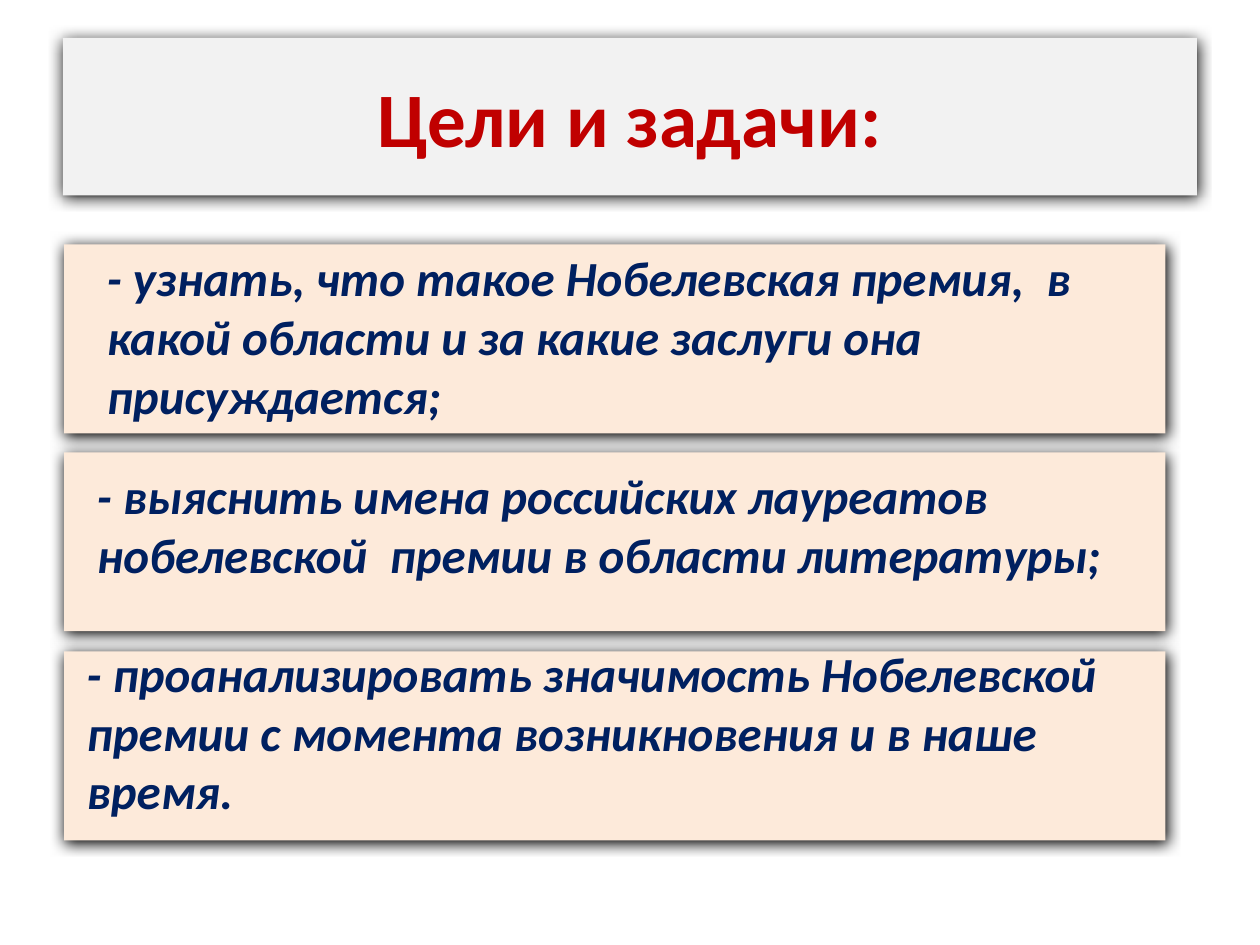
from lxml import etree
from pptx import Presentation
from pptx.dml.color import RGBColor
from pptx.enum.shapes import MSO_SHAPE
from pptx.enum.text import MSO_ANCHOR, PP_ALIGN
from pptx.oxml.ns import qn
from pptx.util import Inches, Pt

GREY = RGBColor(0xF2, 0xF2, 0xF2)
PEACH = RGBColor(0xFD, 0xEA, 0xDA)
RED = RGBColor(0xC0, 0x00, 0x00)
NAVY = RGBColor(0x00, 0x20, 0x60)
BLACK = RGBColor(0x00, 0x00, 0x00)
FONT = "Calibri"

PANEL_LEFT, PANEL_WIDTH = 0.51, 8.74

# Panel top and height; text offset from the panel (x, y); text width and height
GOALS = [
    ("- узнать, что такое Нобелевская премия,  в какой области и за какие заслуги она присуждается;",
     (1.94, 1.5), (0.24, -0.03), (8.66, 1.51)),
    ("- выяснить имена российских лауреатов нобелевской  премии в области литературы;",
     (3.59, 1.42), (0.16, 0.05), (8.35, 1.04)),
    ("- проанализировать значимость Нобелевской премии с момента возникновения и в наше время.",
     (5.17, 1.5), (0.08, -0.12), (8.43, 1.51)),
]


def add_shadow(sp):
    """Give a shape a soft black shadow just below it."""
    sp.shadow.inherit = False
    effects = sp._element.spPr.find(qn("a:effectLst"))
    shadow = etree.SubElement(effects, qn("a:outerShdw"), blurRad=str(Pt(8.5)),
                              dist=str(Pt(1)), dir="5400000", rotWithShape="0")
    etree.SubElement(shadow, qn("a:srgbClr"), val=str(BLACK))


def add_panel(s, left, top, width, height, color):
    sp = s.shapes.add_shape(MSO_SHAPE.RECTANGLE, Inches(left), Inches(top),
                            Inches(width), Inches(height))
    sp.fill.solid()
    sp.fill.fore_color.rgb = color
    sp.line.fill.background()
    add_shadow(sp)
    return sp


def set_text(sp, text, size, color, align, italic=False):
    tf = sp.text_frame
    tf.text = text
    tf.word_wrap = True
    tf.vertical_anchor = MSO_ANCHOR.MIDDLE
    p = tf.paragraphs[0]
    p.alignment = align
    font = p.runs[0].font
    font.name, font.size = FONT, Pt(size)
    font.bold, font.italic = True, italic
    font.color.rgb = color


def add_title(s, left, top, width, height):
    sp = add_panel(s, left, top, width, height, GREY)
    set_text(sp, "Цели и задачи:", 44, RED, PP_ALIGN.CENTER)


def add_goals(s, left, width):
    # Panels first, so that no shadow falls on the text
    for _, (top, height), _, _ in GOALS:
        add_panel(s, left, top, width, height, PEACH)
    for text, (top, _), (dx, dy), (text_width, text_height) in GOALS:
        box = s.shapes.add_textbox(Inches(left + dx), Inches(top + dy),
                                   Inches(text_width), Inches(text_height))
        set_text(box, text, 28, NAVY, PP_ALIGN.LEFT, italic=True)


def main():
    prs = Presentation()
    prs.slide_width, prs.slide_height = Inches(10), Inches(7.5)
    s = prs.slides.add_slide(prs.slide_layouts[6])
    add_title(s, 0.5, 0.3, 9, 1.25)
    add_goals(s, PANEL_LEFT, PANEL_WIDTH)
    prs.save("out.pptx")


if __name__ == "__main__":
    main()
